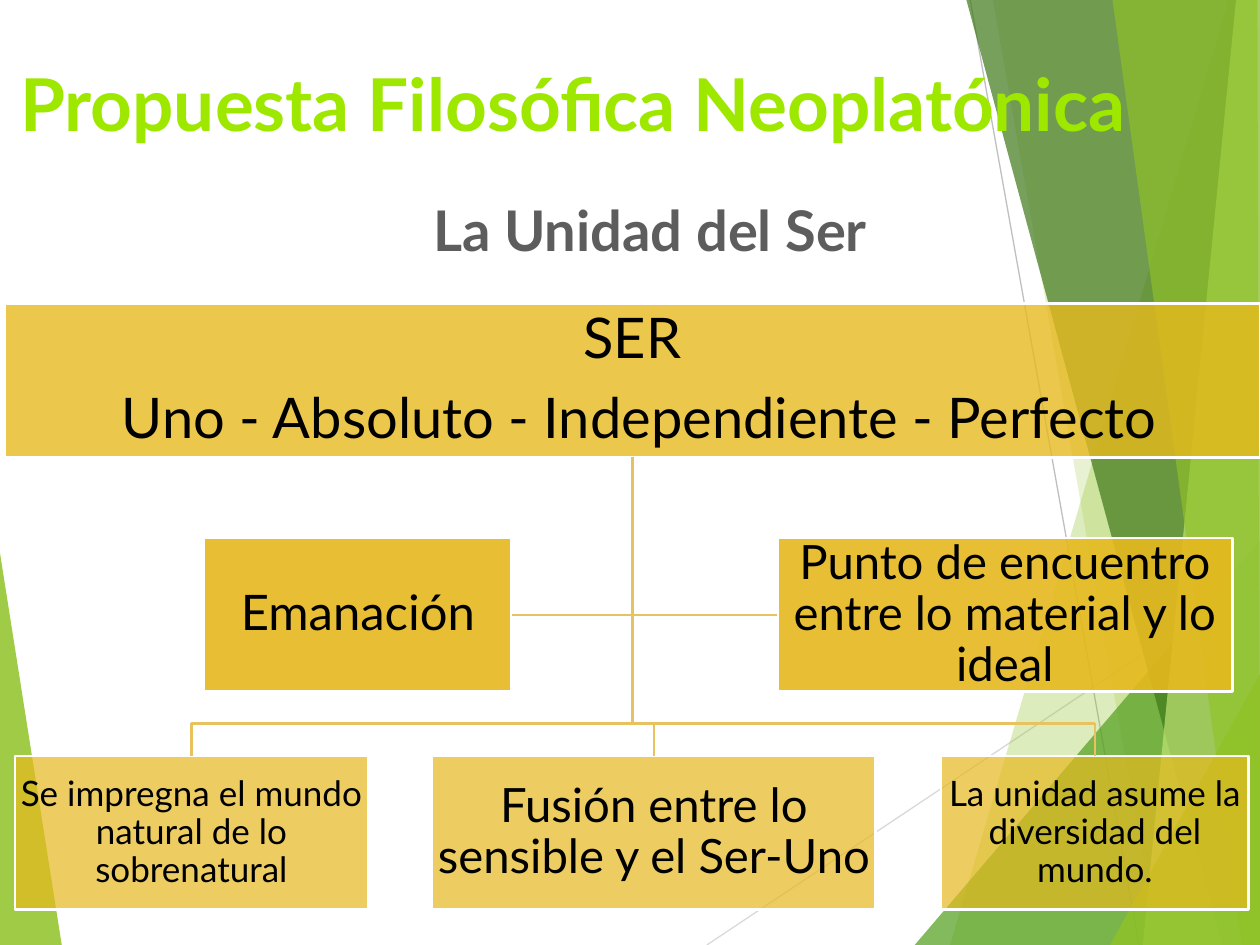
from dataclasses import dataclass

from lxml import etree
from pptx import Presentation
from pptx import util as u
from pptx.dml.color import RGBColor
from pptx.enum import shapes, text
from pptx.oxml import ns


@dataclass(frozen=True)
class Theme:
    font: str = "Lato"
    title: str = "9EE800"
    subtitle: str = "5D5D5D"
    ink: str = "000000"
    gold: str = "E6B91E"
    link: str = "E9C260"
    border: str = "FFFFFF"
    green: str = "90C226"
    leaf: str = "54A021"
    forest: str = "3F7819"
    lime: str = "C0E474"
    title_size: float = 41.6
    large: int = 32
    medium: int = 28
    normal: int = 27
    small: int = 20
    line: float = 1.5
    hairline: float = 0.75


T = Theme()
ROW_HEIGHT = 1.22
ROOT_TOP, SIDE_TOP, CHILD_TOP = 2.41, 4.27, 6
TRUNK_X, BUS_Y = 5.02, 5.74
SIDE_Y = SIDE_TOP + ROW_HEIGHT / 2

# colour, opacity in percent, outline points
LEFT_FACET = (T.green, 85, [(0, 4.39), (0.49, 7.5), (0, 7.5)])
RIGHT_FACETS = [
    (T.green, 30, [(9.75, 0), (7.54, 7.5), (10, 7.5), (10, 0)]),
    (T.green, 20, [(7.88, 0), (9.19, 7.5), (10, 7.5), (10, 0)]),
    (T.leaf, 72, [(7.26, 7.5), (10, 4.29), (10, 7.5)]),
    (T.forest, 70, [(7.67, 0), (9.7, 7.5), (10, 7.5), (10, 0)]),
    (T.lime, 70, [(9.81, 0), (9.07, 7.5), (10, 7.5), (10, 0)]),
    (T.green, 65, [(8.83, 0), (9.86, 7.5), (10, 7.5), (9.98, 0)]),
    (T.green, 80, [(8.81, 7.5), (10, 5.35), (10, 7.5)]),
]

# left, width, text, type size
CHILDREN = [
    (0.12, 2.8, "Se impregna el mundo natural de lo sobrenatural", T.small),
    (3.43, 3.52, "Fusión entre lo sensible y el Ser-Uno", T.normal),
    (7.47, 2.44, "La unidad asume la diversidad del mundo.", T.small),
]


class Builder:
    """Holds the theme and the slide being drawn."""

    def __init__(self, s, theme):
        self.s, self.t = s, theme

    def fill(self, sp, color, opacity):
        sp.shadow.inherit = False
        sp.fill.solid()
        sp.fill.fore_color.rgb = RGBColor.from_string(color)
        clr = sp.fill._xPr.find(".//" + ns.qn("a:srgbClr"))
        etree.SubElement(clr, ns.qn("a:alpha"), val=str(opacity * 1000))

    def run(self, p, words, size, color, bold=False):
        r = p.add_run()
        r.text = words
        r.font.name, r.font.size, r.font.bold = self.t.font, u.Pt(size), bold
        r.font.color.rgb = RGBColor.from_string(color)

    def facet(self, color, opacity, points):
        pts = [(u.Inches(x), u.Inches(y)) for x, y in points]
        fb = self.s.shapes.build_freeform(*pts[0])
        fb.add_line_segments(pts[1:], close=True)
        sp = fb.convert_to_shape()
        self.fill(sp, color, opacity)
        sp.line.fill.background()

    def line(self, start, end, color, width, begin=None, finish=None):
        """Draw a straight line; begin and finish are (shape, side) joints."""
        cx = self.s.shapes.add_connector(
            shapes.MSO_CONNECTOR.STRAIGHT, *map(u.Inches, (*start, *end)))
        cx.line.color.rgb = RGBColor.from_string(color)
        cx.line.width = u.Pt(width)
        etree.SubElement(cx._element.spPr, ns.qn("a:effectLst"))
        if begin:
            cx.begin_connect(*begin)
        if finish:
            cx.end_connect(*finish)

    def link(self, start, end, **joints):
        self.line(start, end, self.t.link, self.t.line, **joints)

    def title(self, words, left, top, width, height):
        sp = self.s.shapes.title
        sp.left, sp.top = u.Inches(left), u.Inches(top)
        sp.width, sp.height = u.Inches(width), u.Inches(height)
        tree = sp.element.getparent()
        tree.append(sp.element)  # bring in front of the facets
        tf = sp.text_frame
        tf.word_wrap, tf.auto_size = True, text.MSO_AUTO_SIZE.NONE
        tf.vertical_anchor = text.MSO_ANCHOR.MIDDLE
        tf.margin_left = u.Inches(0.1)
        tf.margin_right = tf.margin_top = tf.margin_bottom = u.Inches(0.05)
        p = tf.paragraphs[0]
        p.alignment = text.PP_ALIGN.LEFT
        self.run(p, words, self.t.title_size, self.t.title, True)

    def subtitle(self, words, *box):
        tf = self.s.shapes.add_textbox(*map(u.Inches, box)).text_frame
        tf.word_wrap = True
        p = tf.paragraphs[0]
        p.alignment = text.PP_ALIGN.CENTER
        self.run(p, words, self.t.large, self.t.subtitle, True)

    def box(self, left, top, width, lines, size, opacity):
        sp = self.s.shapes.add_shape(
            shapes.MSO_SHAPE.RECTANGLE,
            *map(u.Inches, (left, top, width, ROW_HEIGHT)))
        self.fill(sp, self.t.gold, opacity)
        sp.line.color.rgb = RGBColor.from_string(self.t.border)
        sp.line.width = u.Pt(self.t.line)
        tf = sp.text_frame
        tf.word_wrap = True
        tf.vertical_anchor = text.MSO_ANCHOR.MIDDLE
        inset = u.Inches(0.01 if size == self.t.small else 0.02)
        tf.margin_left = tf.margin_right = inset
        tf.margin_top = tf.margin_bottom = inset
        for i, words in enumerate(lines):
            p = tf.add_paragraph() if i else tf.paragraphs[0]
            p.alignment = text.PP_ALIGN.CENTER
            p.line_spacing = 0.9
            p.space_after = u.Pt(round(size * 0.35))
            self.run(p, words, size, self.t.ink)
        return sp


def main():
    prs = Presentation()
    prs.slide_width, prs.slide_height = u.Inches(10), u.Inches(7.5)
    b = Builder(prs.slides.add_slide(prs.slide_layouts[5]), T)

    b.facet(*LEFT_FACET)
    b.line((5.61, 7.5), (10, 4.57), "D9D9D9", T.hairline)
    b.line((7.7, 0), (9.04, 7.5), "BFBFBF", T.hairline)
    for facet in RIGHT_FACETS:
        b.facet(*facet)

    b.title("Propuesta Filosófica Neoplatónica", 0.06, 0.13, 9.43, 1.37)
    b.subtitle("La Unidad del Ser", 2.72, 1.5, 4.88, 0.64)

    root = b.box(0.04, ROOT_TOP, 9.96,
                 ["SER", " Uno - Absoluto - Independiente - Perfecto"],
                 T.large, 80)
    source = b.box(1.62, SIDE_TOP, 2.44, ["Emanación"], T.medium, 90)
    meeting = b.box(6.17, SIDE_TOP, 3.61,
                    ["Punto de encuentro entre lo material y lo ideal"],
                    T.normal, 90)

    b.link((TRUNK_X, ROOT_TOP + ROW_HEIGHT), (TRUNK_X, BUS_Y), begin=(root, 2))
    b.link((4.06, SIDE_Y), (6.17, SIDE_Y),
           begin=(source, 3), finish=(meeting, 1))
    centres = [left + width / 2 for left, width, *_ in CHILDREN]
    b.link((centres[0], BUS_Y), (centres[-1], BUS_Y))
    for x, (left, width, words, size) in zip(centres, CHILDREN):
        child = b.box(left, CHILD_TOP, width, [words], size, 70)
        b.link((x, BUS_Y), (x, CHILD_TOP), finish=(child, 0))

    prs.save("out.pptx")


if __name__ == "__main__":
    main()
